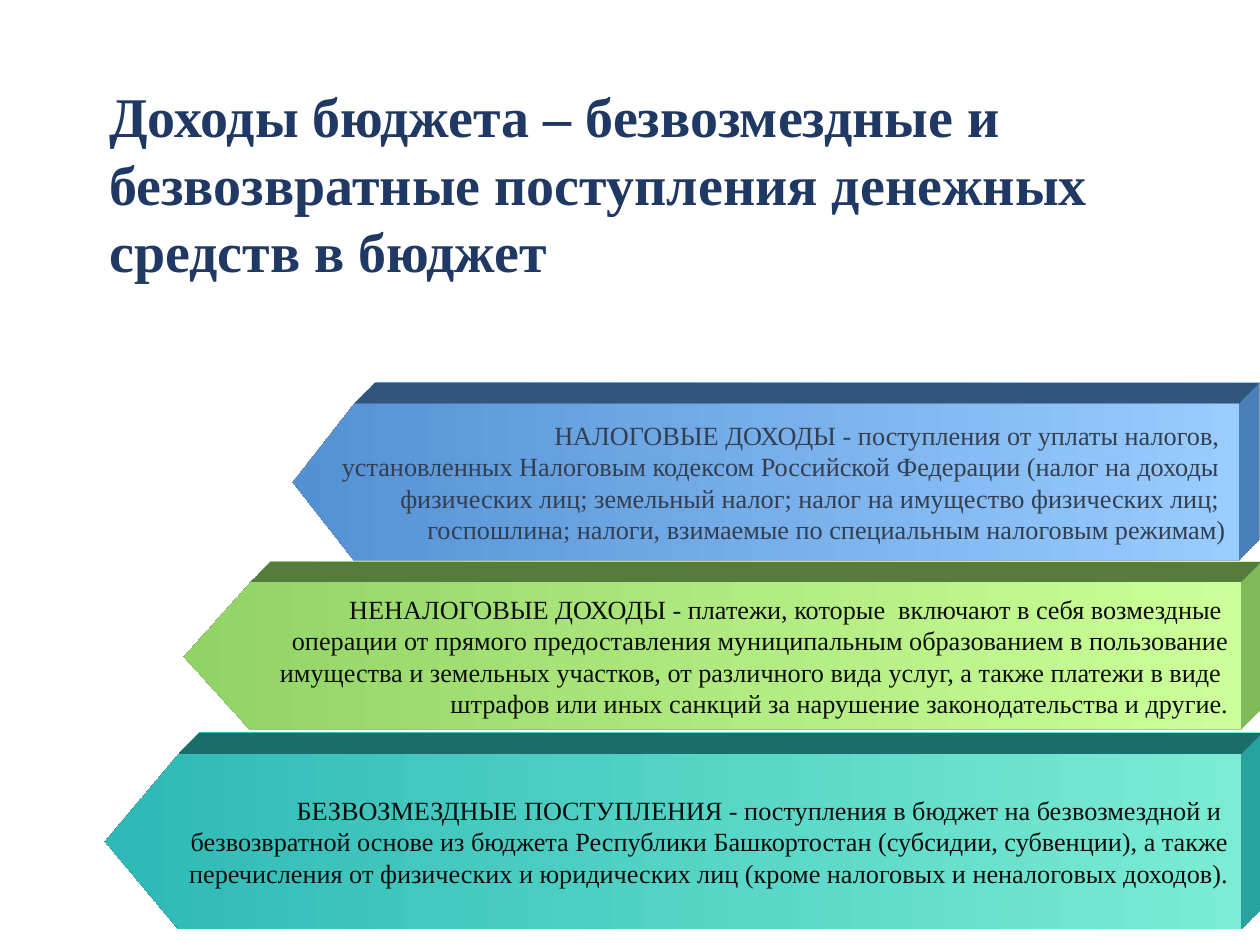
from lxml import etree
from pptx import Presentation
from pptx.dml.color import RGBColor
from pptx.enum.shapes import MSO_SHAPE
from pptx.enum.text import MSO_ANCHOR, MSO_AUTO_SIZE, PP_ALIGN
from pptx.oxml import parse_xml
from pptx.oxml.ns import nsdecls
from pptx.util import Inches, Pt

PENTAGON = MSO_SHAPE.PENTAGON
MIDDLE, TOP = MSO_ANCHOR.MIDDLE, MSO_ANCHOR.TOP
LEFT, RIGHT = PP_ALIGN.LEFT, PP_ALIGN.RIGHT
FIT_TEXT = MSO_AUTO_SIZE.SHAPE_TO_FIT_TEXT

FONT = "Times New Roman"
NAVY, BLACK, SLATE = "203864", "0D0D0D", "333F50"

TITLE = [
    "Доходы бюджета – безвозмездные и безвозвратные поступления денежных",
    "средств в бюджет",
]

# position and size, point depth, gradient start and end, text colour, lines
ARROWS = [
    ((0.83, 5.98, 9.02, 1.39), 0.42, "2EB9B6", "7AECD4", BLACK, [
        "БЕЗВОЗМЕЗДНЫЕ ПОСТУПЛЕНИЯ - поступления в бюджет на безвозмездной и ",
        "безвозвратной основе из бюджета Республики Башкортостан (субсидии, субвенции), а также",
        "перечисления от физических и юридических лиц (кроме налоговых и неналоговых доходов).",
    ]),
    ((1.46, 4.62, 8.39, 1.17), 0.45, "92D365", "CCFF99", BLACK, [
        "НЕНАЛОГОВЫЕ ДОХОДЫ - платежи, которые  включают в себя возмездные ",
        "операции от прямого предоставления муниципальным образованием в пользование",
        "имущества и земельных участков, от различного вида услуг, а также платежи в виде ",
        "штрафов или иных санкций за нарушение законодательства и другие.",
    ]),
    ((2.32, 3.2, 7.51, 1.25), 0.39, "5491D4", "99CCFF", SLATE, [
        "НАЛОГОВЫЕ ДОХОДЫ - поступления от уплаты налогов, ",
        "установленных Налоговым кодексом Российской Федерации (налог на доходы ",
        "физических лиц; земельный налог; налог на имущество физических лиц; ",
        "госпошлина; налоги, взимаемые по специальным налоговым режимам)",
    ]),
]


def rgb(color):
    return RGBColor.from_string(color)


def write(tf, lines, size, color, bold=False, align=LEFT, anchor=TOP, wrap=True):
    tf.word_wrap = wrap
    tf.vertical_anchor = anchor
    for i, line in enumerate(lines):
        p = tf.paragraphs[0] if i == 0 else tf.add_paragraph()
        p.alignment = align
        r = p.add_run()
        r.text = line
        r.font.name = FONT
        r.font.size = Pt(size)
        r.font.bold = bold
        r.font.color.rgb = rgb(color)


def extrude(sp, color):
    """Give the shape an oblique depth towards the top right."""
    spPr = sp._element.spPr
    spPr.append(parse_xml(
        f'<a:scene3d {nsdecls("a")}><a:camera prst="legacyObliqueTopRight"/>'
        '<a:lightRig rig="legacyFlat3" dir="b"/></a:scene3d>'))
    sp3d = parse_xml(
        f'<a:sp3d {nsdecls("a")} extrusionH="430200" prstMaterial="legacyMatte"/>')
    for side in ("bevelT", "bevelB"):
        etree.SubElement(sp3d, sp3d.tag.replace("sp3d", side),
                         w="13500", h="13500", prst="angle")
    depth_color = etree.SubElement(sp3d, sp3d.tag.replace("sp3d", "extrusionClr"))
    etree.SubElement(depth_color, sp3d.tag.replace("sp3d", "srgbClr"), val=color)
    spPr.append(sp3d)


def add_arrow(slide, box, point, start, end, color, lines):
    sp = slide.shapes.add_shape(PENTAGON, *map(Inches, box))
    sp.adjustments[0] = point
    sp._element.spPr.xfrm.set("flipH", "1")
    sp.shadow.inherit = False
    sp.line.fill.background()
    sp.fill.gradient()
    sp.fill.gradient_angle = 0
    for stop, stop_color in zip(sp.fill.gradient_stops, (start, end)):
        stop.color.rgb = rgb(stop_color)
    extrude(sp, start)
    write(sp.text_frame, lines, 15, color, align=RIGHT, anchor=MIDDLE, wrap=False)


def add_title(slide):
    box = slide.shapes.add_textbox(*map(Inches, (0.77, 0.6, 8.74, 1.72)))
    write(box.text_frame, TITLE, 32, NAVY, bold=True)
    box.text_frame.auto_size = FIT_TEXT


def main():
    prs = Presentation()
    prs.slide_width, prs.slide_height = Inches(10), Inches(7.5)
    slide = prs.slides.add_slide(prs.slide_layouts[6])
    for arrow in ARROWS:
        add_arrow(slide, *arrow)
    add_title(slide)
    prs.save("out.pptx")


if __name__ == "__main__":
    main()
